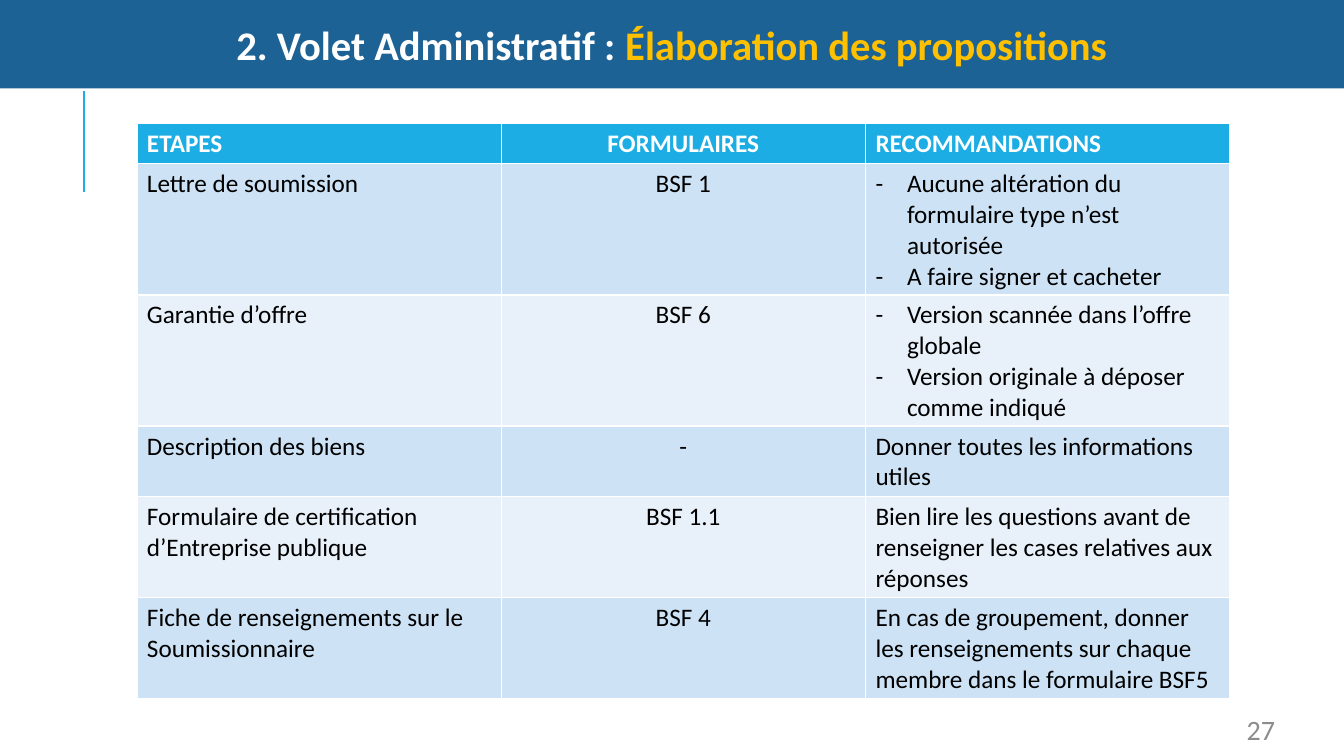
from dataclasses import dataclass

from lxml import etree
from pptx import Presentation
from pptx.dml.color import RGBColor
from pptx.enum import shapes, text
from pptx.oxml import ns
from pptx.util import Pt

COLORS = {
    "banner": "1D6294",
    "accent": "1CADE4",
    "highlight": "FFC000",
    "white": "FFFFFF",
    "black": "000000",
    "number": "8C8C8C",
    "odd_row": "CDE3F5",
    "even_row": "E8F1FA",
}
FONT = "Calibri"
SLIDE_WIDTH, SLIDE_HEIGHT = 960, 540
COLUMN_WIDTH = 260.2
LINE_HEIGHT, CELL_PADDING = 21.6, 7.2
DASH_INDENT = 22.5
LEFT, CENTER, RIGHT = text.PP_ALIGN.LEFT, text.PP_ALIGN.CENTER, text.PP_ALIGN.RIGHT
COLUMN_ALIGNS = (LEFT, CENTER, LEFT)


@dataclass(frozen=True)
class Step:
    name: str
    form: str
    advice: tuple[str, ...]
    lines: int


HEADINGS = ("ETAPES", "FORMULAIRES", "RECOMMANDATIONS")
STEPS = (
    Step("Lettre de soumission", "BSF 1",
         ("Aucune altération du formulaire type n’est autorisée",
          "A faire signer et cacheter"), 4),
    Step("Garantie d’offre", "BSF 6",
         ("Version scannée dans l’offre globale",
          "Version originale à déposer comme indiqué"), 4),
    Step("Description des biens", "-",
         ("Donner toutes les informations utiles",), 2),
    Step("Formulaire de certification d’Entreprise publique", "BSF 1.1",
         ("Bien lire les questions avant de renseigner les cases relatives aux réponses",), 3),
    Step("Fiche de renseignements sur le Soumissionnaire", "BSF 4",
         ("En cas de groupement, donner les renseignements sur chaque membre "
          "dans le formulaire BSF5",), 3),
)


def rgb(name: str) -> RGBColor:
    return RGBColor.from_string(COLORS[name])


def write(paragraph, words: str, *, size: float = 18, color: str = "black",
          bold: bool = False, align=LEFT) -> None:
    """Append a formatted run to the paragraph."""
    paragraph.alignment = align
    run = paragraph.add_run()
    run.text = words
    run.font.name = FONT
    run.font.size = Pt(size)
    run.font.bold = bold
    run.font.color.rgb = rgb(color)


def add_dash(paragraph) -> None:
    properties = paragraph._p.get_or_add_pPr()
    properties.set("marL", str(Pt(DASH_INDENT)))
    properties.set("indent", str(-Pt(DASH_INDENT)))
    etree.SubElement(properties, ns.qn("a:buFont")).set("typeface", FONT)
    etree.SubElement(properties, ns.qn("a:buChar")).set("char", "-")


def add_margin_line(slide) -> None:
    line = slide.shapes.add_connector(
        shapes.MSO_CONNECTOR.STRAIGHT, Pt(60), Pt(137), Pt(60), Pt(65))
    line.line.color.rgb = rgb("accent")
    line.line.width = Pt(1.5)
    etree.SubElement(line._element.spPr, ns.qn("a:effectLst"))


def add_banner(slide) -> None:
    banner = slide.shapes.add_shape(
        shapes.MSO_SHAPE.RECTANGLE, 0, 0, Pt(SLIDE_WIDTH), Pt(63.2))
    banner.shadow.inherit = False
    banner.fill.solid()
    banner.fill.fore_color.rgb = rgb("banner")
    banner.line.fill.background()
    frame = banner.text_frame
    frame.vertical_anchor = text.MSO_ANCHOR.MIDDLE
    frame.margin_left = frame.margin_right = Pt(8)
    frame.margin_top = frame.margin_bottom = Pt(4)
    title = frame.paragraphs[0]
    for words, color in (("2. Volet Administratif : ", "white"),
                         ("Élaboration des propositions", "highlight")):
        write(title, words, size=29, color=color, bold=True, align=CENTER)


def add_page_number(slide) -> None:
    number = slide.shapes.add_textbox(Pt(878.4), Pt(509), Pt(32.4), Pt(24.5))
    frame = number.text_frame
    frame.word_wrap = True
    frame.margin_left = frame.margin_right = frame.margin_top = frame.margin_bottom = 0
    write(frame.paragraphs[0], "27", size=20, color="number", align=RIGHT)


def fill_row(table, index: int, entries: tuple[tuple[str, ...], ...],
             fill: str, lines: int, **style) -> None:
    """Write one row; an entry of several texts becomes a dashed list."""
    table.rows[index].height = Pt(CELL_PADDING + LINE_HEIGHT * lines)
    for cell, entry, align in zip(table.rows[index].cells, entries, COLUMN_ALIGNS):
        cell.fill.solid()
        cell.fill.fore_color.rgb = rgb(fill)
        frame = cell.text_frame
        for position, words in enumerate(entry):
            paragraph = frame.add_paragraph() if position else frame.paragraphs[0]
            write(paragraph, words, align=align, **style)
            if len(entry) > 1:
                add_dash(paragraph)


def add_steps_table(slide) -> None:
    row_count, column_count = len(STEPS) + 1, len(HEADINGS)
    table = slide.shapes.add_table(
        row_count, column_count, Pt(97.8), Pt(88.2),
        Pt(COLUMN_WIDTH * column_count), Pt(29 * row_count)).table
    for column in table.columns:
        column.width = Pt(COLUMN_WIDTH)
    fill_row(table, 0, tuple((heading,) for heading in HEADINGS), "accent", 1,
             color="white", bold=True)
    for index, step in enumerate(STEPS, start=1):
        fill_row(table, index, ((step.name,), (step.form,), step.advice),
                 "odd_row" if index % 2 else "even_row", step.lines)


def main() -> None:
    deck = Presentation()
    deck.slide_width, deck.slide_height = Pt(SLIDE_WIDTH), Pt(SLIDE_HEIGHT)
    slide = deck.slides.add_slide(deck.slide_layouts[6])
    add_margin_line(slide)
    add_banner(slide)
    add_page_number(slide)
    add_steps_table(slide)
    deck.save("out.pptx")


if __name__ == "__main__":
    main()
